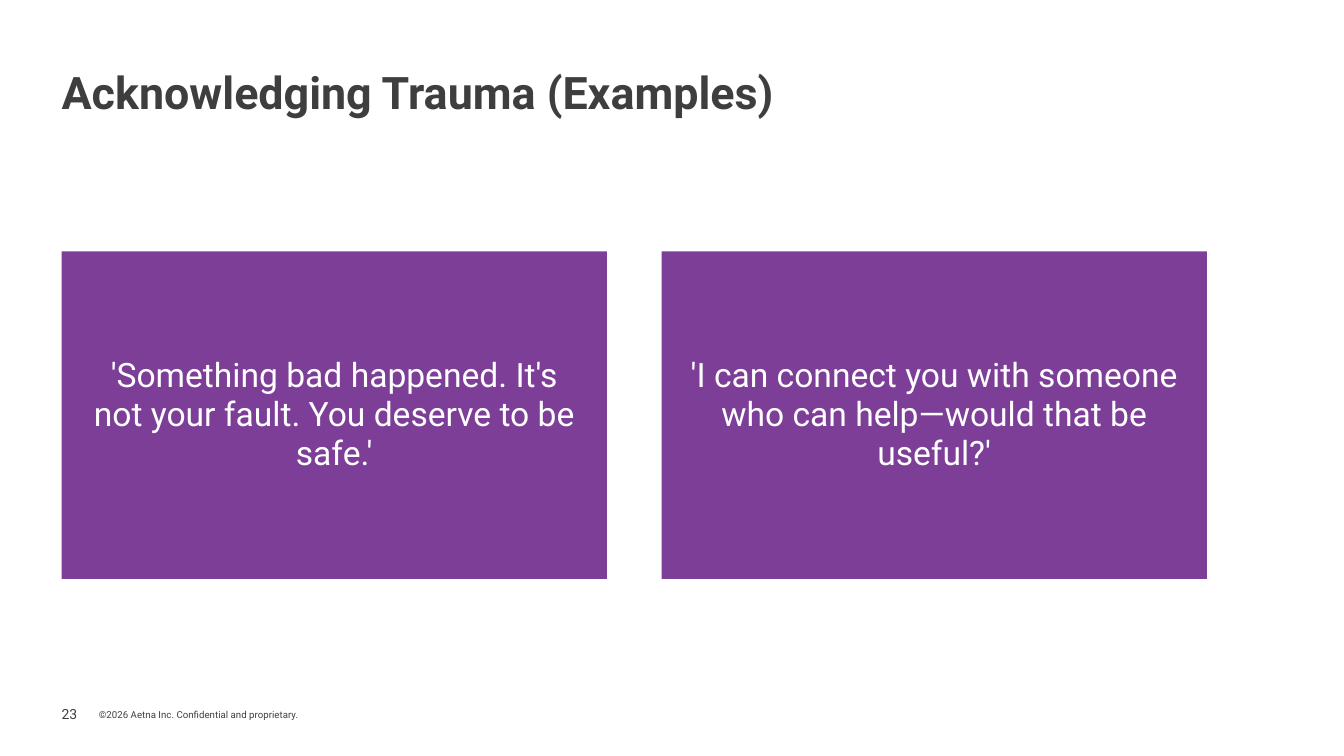
from pptx import Presentation
from pptx.dml.color import RGBColor
from pptx.enum.shapes import MSO_SHAPE
from pptx.enum.text import MSO_ANCHOR, MSO_AUTO_SIZE, PP_ALIGN
from pptx.oxml import parse_xml
from pptx.oxml.ns import nsdecls
from pptx.util import Pt

PURPLE = RGBColor(0x7C, 0x3E, 0x97)
DARK = RGBColor(0x3E, 0x3E, 0x3E)
WHITE = RGBColor(0xFF, 0xFF, 0xFF)
RECT = MSO_SHAPE.RECTANGLE
TOP, MIDDLE = MSO_ANCHOR.TOP, MSO_ANCHOR.MIDDLE
LEFT, CENTER = PP_ALIGN.LEFT, PP_ALIGN.CENTER
FIXED = MSO_AUTO_SIZE.NONE


def style(run, size, color, bold=False):
    look = {"name": "Roboto", "size": Pt(size), "bold": bold}
    for key, value in look.items():
        setattr(run.font, key, value)
    run.font.color.rgb = color


def frame(shape, anchor, side=0, top=0):
    look = {
        "word_wrap": True,
        "auto_size": FIXED,
        "vertical_anchor": anchor,
        "margin_left": Pt(side),
        "margin_right": Pt(side),
        "margin_top": Pt(top),
        "margin_bottom": 0,
    }
    for key, value in look.items():
        setattr(shape.text_frame, key, value)
    return shape.text_frame.paragraphs[0]


deck = Presentation()
deck.slide_width, deck.slide_height = Pt(960), Pt(540)
slide = deck.slides.add_slide(deck.slide_layouts[5])
shapes = slide.shapes

# Title
title = shapes.title
title.left, title.top, title.width, title.height = Pt(44), Pt(45), Pt(614), Pt(40)
para = frame(title, TOP, top=1)
para.alignment = LEFT
run = para.add_run()
run.text = "Acknowledging Trauma (Examples)"
style(run, 32, DARK, True)

# Quote cards
quotes = [
    "'Something bad happened. It's not your fault. You deserve to be safe.'",
    "'I can connect you with someone who can help—would that be useful?'",
]
for i, quote in enumerate(quotes):
    card = shapes.add_shape(RECT, Pt(44 + 428.5 * i), Pt(179.5), Pt(389.5), Pt(234))
    card.shadow.inherit = False
    card.fill.solid()
    card.fill.fore_color.rgb = PURPLE
    card.line.fill.background()
    para = frame(card, MIDDLE, side=18)
    para.alignment = CENTER
    para.line_spacing = 0.97
    run = para.add_run()
    run.text = quote
    style(run, 24, WHITE)

# Page number and copyright line
foot = shapes.add_textbox(Pt(41), Pt(506), Pt(201), Pt(12))
para = frame(foot, TOP)
para.line_spacing = Pt(10.3)
props = para._p.get_or_add_pPr()
props.set("marL", str(Pt(3)))
props.append(parse_xml(
    f'<a:tabLst {nsdecls("a")}><a:tab pos="{Pt(26.64)}" algn="l"/></a:tabLst>'))
for text, size in [("23\t", 10), ("©2026 Aetna Inc. Confidential and proprietary.", 12)]:
    run = para.add_run()
    run.text = text
    style(run, size, DARK)
run.font._element.set("baseline", "3000")

deck.save("out.pptx")
